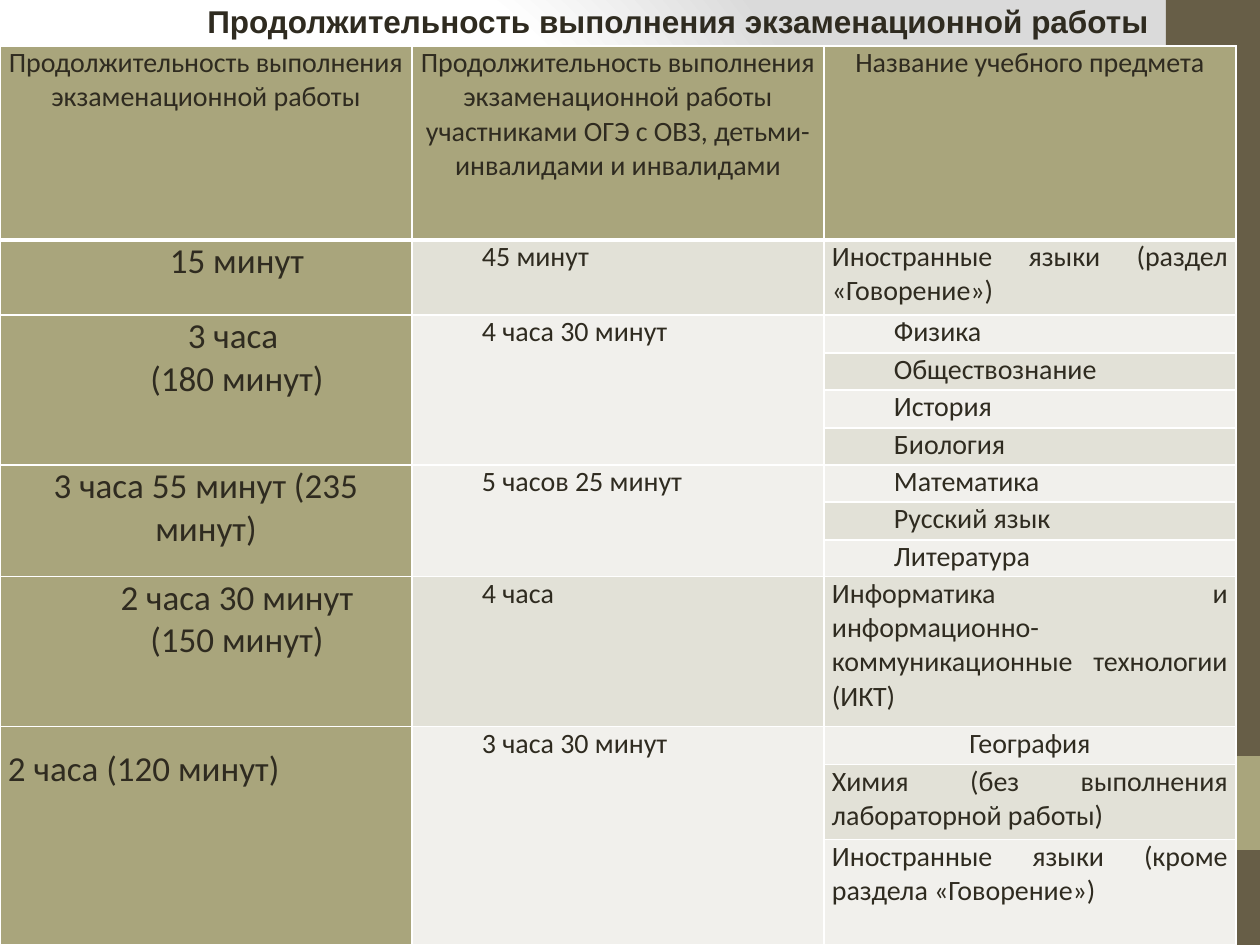
from dataclasses import dataclass
from typing import Sequence

from pptx import Presentation
from pptx.dml.color import RGBColor
from pptx.enum.shapes import MSO_SHAPE as Preset
from pptx.enum.text import MSO_ANCHOR as Anchor, MSO_AUTO_SIZE as AutoSize, PP_ALIGN as Align
from pptx.oxml import parse_xml
from pptx.oxml.ns import nsdecls, qn
from pptx.util import Emu, Pt

EMU_PER_PX = 914400 / 126
INK, OLIVE, BROWN, WHITE = "2F2B20", "A9A57C", "675E47", "FFFFFF"
BANDS = ("F1F0EC", "E2E1D7")
FIRST_LINE = 62
COLUMN_WIDTH = 412
ROW_HEIGHTS = (194, 75, 38, 37, 38, 37, 37, 38, 37, 150, 38, 75, 105)


@dataclass(frozen=True)
class Entry:
    text: str
    size: int = 16
    align: Align = Align.JUSTIFY
    indent: int = FIRST_LINE
    spacing: float = 1.0


@dataclass(frozen=True)
class DurationGroup:
    standard: Entry
    extended: Entry
    subjects: Sequence[Entry]


@dataclass(frozen=True)
class Panel:
    top: int
    height: int
    color: str


def heading(text: str) -> Entry:
    return Entry(text, align=Align.CENTER, indent=0)


def duration(text: str, indent: int = FIRST_LINE) -> Entry:
    return Entry(text, 20, Align.CENTER, indent)


def flush(text: str) -> Entry:
    return Entry(text, indent=0)


PANELS = (Panel(0, 945, BROWN), Panel(756, 94, OLIVE))
HEADINGS = (
    heading("Продолжительность выполнения экзаменационной работы"),
    heading("Продолжительность выполнения экзаменационной работы участниками ОГЭ "
            "с ОВЗ, детьми-инвалидами и инвалидами"),
    heading("Название учебного предмета"),
)
GROUPS = (
    DurationGroup(duration("15 минут"), Entry("45 минут"),
                  [flush("Иностранные языки (раздел «Говорение»)")]),
    DurationGroup(duration("3 часа \n(180 минут)"), Entry("4 часа 30 минут"),
                  [Entry("Физика"), Entry("Обществознание"), Entry("История"), Entry("Биология")]),
    DurationGroup(duration("3 часа 55 минут (235 минут)", 0), Entry("5 часов 25 минут"),
                  [Entry("Математика"), Entry("Русский язык"), Entry("Литература")]),
    DurationGroup(duration("2 часа 30 минут\n(150 минут)"), Entry("4 часа "),
                  [flush("Информатика и информационно-коммуникационные технологии (ИКТ)")]),
    DurationGroup(Entry("2 часа (120 минут)", 20, Align.LEFT, 0, 1.5), Entry("3 часа 30 минут"),
                  [heading("География"), flush("Химия (без выполнения лабораторной работы)"),
                   flush("Иностранные языки (кроме раздела «Говорение»)")]),
)


def px(length: int) -> Emu:
    return Emu(round(length * EMU_PER_PX))


def rgb(color: str) -> RGBColor:
    return RGBColor.from_string(color)


def set_background(slide) -> None:
    slide.background.fill.solid()
    properties = slide.element.find(".//" + qn("p:bgPr"))
    stops = "".join(f'<a:gs pos="{position}"><a:srgbClr val="{color}"/></a:gs>'
                    for position, color in ((0, WHITE), (75000, WHITE), (100000, "DADADA")))
    properties.replace(properties[0], parse_xml(
        f'<a:gradFill {nsdecls("a")} rotWithShape="1"><a:gsLst>{stops}</a:gsLst>'
        '<a:path path="circle"><a:fillToRect l="20000" t="50000" r="100000" b="50000"/>'
        '</a:path></a:gradFill>'))


def draw_panel(slide, panel: Panel) -> None:
    shape = slide.shapes.add_shape(Preset.RECTANGLE, px(1166), px(panel.top),
                                   px(94), px(panel.height))
    shape.shadow.inherit = False
    shape.fill.solid()
    shape.fill.fore_color.rgb = rgb(panel.color)
    shape.line.fill.background()


def format_text(text_frame, entry: Entry, font: str, bold: bool = False) -> None:
    text_frame.word_wrap = True
    text_frame.text = entry.text
    for paragraph in text_frame.paragraphs:
        paragraph.alignment = entry.align
        paragraph.line_spacing = entry.spacing
        properties = paragraph._p.get_or_add_pPr()
        properties.set("marL", "0")
        properties.set("indent", str(px(entry.indent)))
        for run in paragraph.runs:
            run.font.name = font
            run.font.size = Pt(entry.size)
            run.font.bold = bold
            run.font.color.rgb = rgb(INK)


def style_cell(cell, color: str, bottom_width: int = 1) -> None:
    cell.margin_left = cell.margin_right = px(8)
    cell.margin_top = cell.margin_bottom = 0
    properties = cell._tc.get_or_add_tcPr()
    for side, width in (("L", 1), ("R", 1), ("T", 1), ("B", bottom_width)):
        properties.append(parse_xml(
            f'<a:ln{side} {nsdecls("a")} w="{Pt(width)}"><a:solidFill>'
            f'<a:srgbClr val="{WHITE}"/></a:solidFill></a:ln{side}>'))
    cell.fill.solid()
    cell.fill.fore_color.rgb = rgb(color)


def draw_table(slide) -> None:
    table = slide.shapes.add_table(len(ROW_HEIGHTS), len(HEADINGS), 0, px(46),
                                   px(COLUMN_WIDTH * len(HEADINGS)), px(sum(ROW_HEIGHTS))).table
    table.first_row = table.horz_banding = False
    for column in table.columns:
        column.width = px(COLUMN_WIDTH)
    for row, height in zip(table.rows, ROW_HEIGHTS):
        row.height = px(height)
    for index, entry in enumerate(HEADINGS):
        cell = table.cell(0, index)
        style_cell(cell, OLIVE, 3)
        format_text(cell.text_frame, entry, "Calibri")
    first = 1
    for group in GROUPS:
        last = first + len(group.subjects) - 1
        for index, subject in enumerate(group.subjects, first):
            for column, color in enumerate((OLIVE, BANDS[first % 2], BANDS[index % 2])):
                style_cell(table.cell(index, column), color)
            format_text(table.cell(index, 2).text_frame, subject, "Calibri")
        for column, entry in enumerate((group.standard, group.extended)):
            cell = table.cell(first, column)
            if last > first:
                cell.merge(table.cell(last, column))
            format_text(cell.text_frame, entry, "Calibri")
        first = last + 1


def draw_title(slide) -> None:
    title = slide.shapes.title
    title.left, title.top, title.width, title.height = px(0), px(-4), px(1303), px(50)
    title.text_frame.vertical_anchor = Anchor.MIDDLE
    title.text_frame.auto_size = AutoSize.SHAPE_TO_FIT_TEXT
    entry = Entry("Продолжительность выполнения экзаменационной работы ", 18, Align.CENTER)
    format_text(title.text_frame, entry, "Arial", bold=True)
    title.element.getparent().append(title.element)


def main() -> None:
    presentation = Presentation()
    presentation.slide_width, presentation.slide_height = px(1260), px(945)
    slide = presentation.slides.add_slide(presentation.slide_layouts[5])
    set_background(slide)
    for panel in PANELS:
        draw_panel(slide, panel)
    draw_table(slide)
    draw_title(slide)
    presentation.save("out.pptx")


if __name__ == "__main__":
    main()
